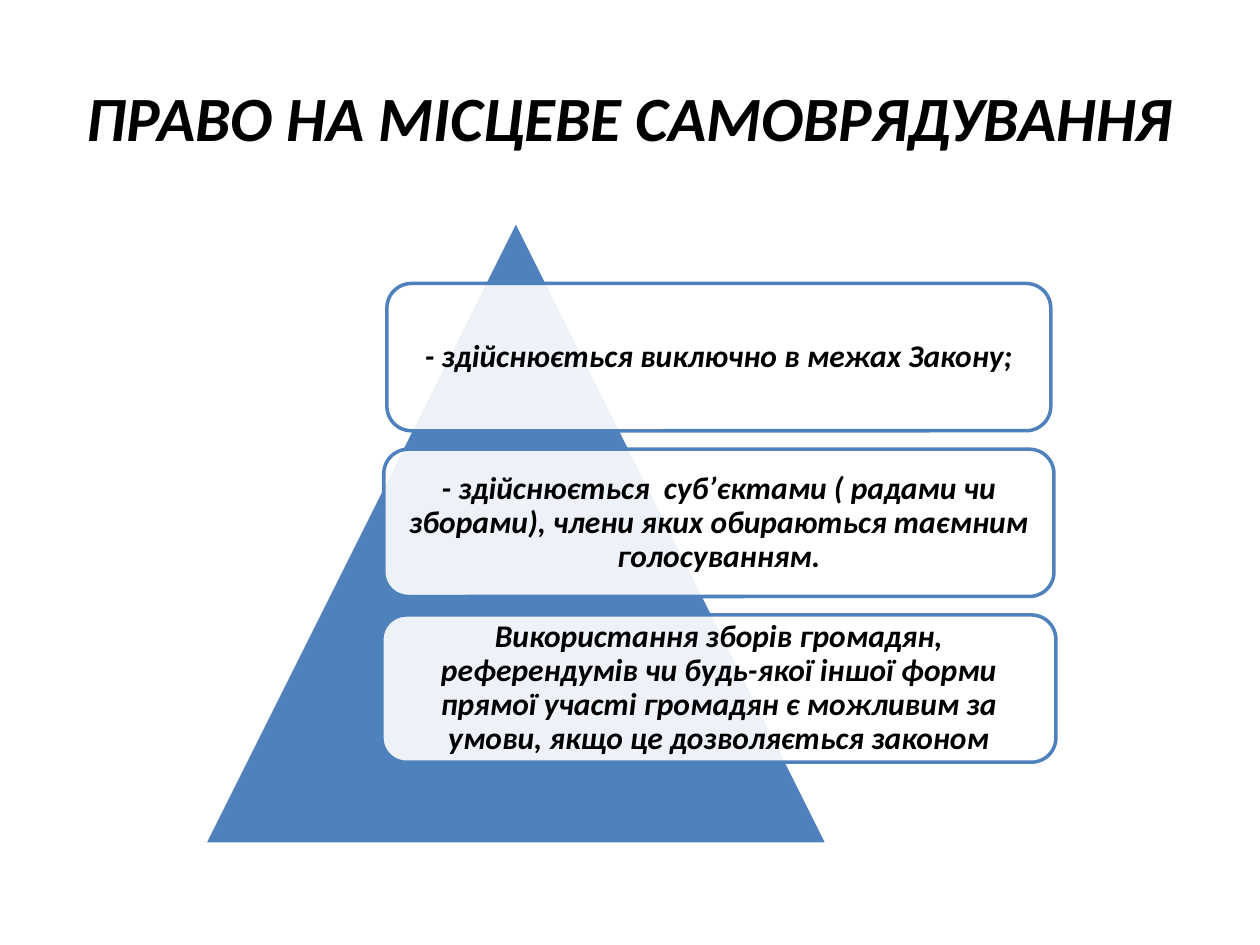
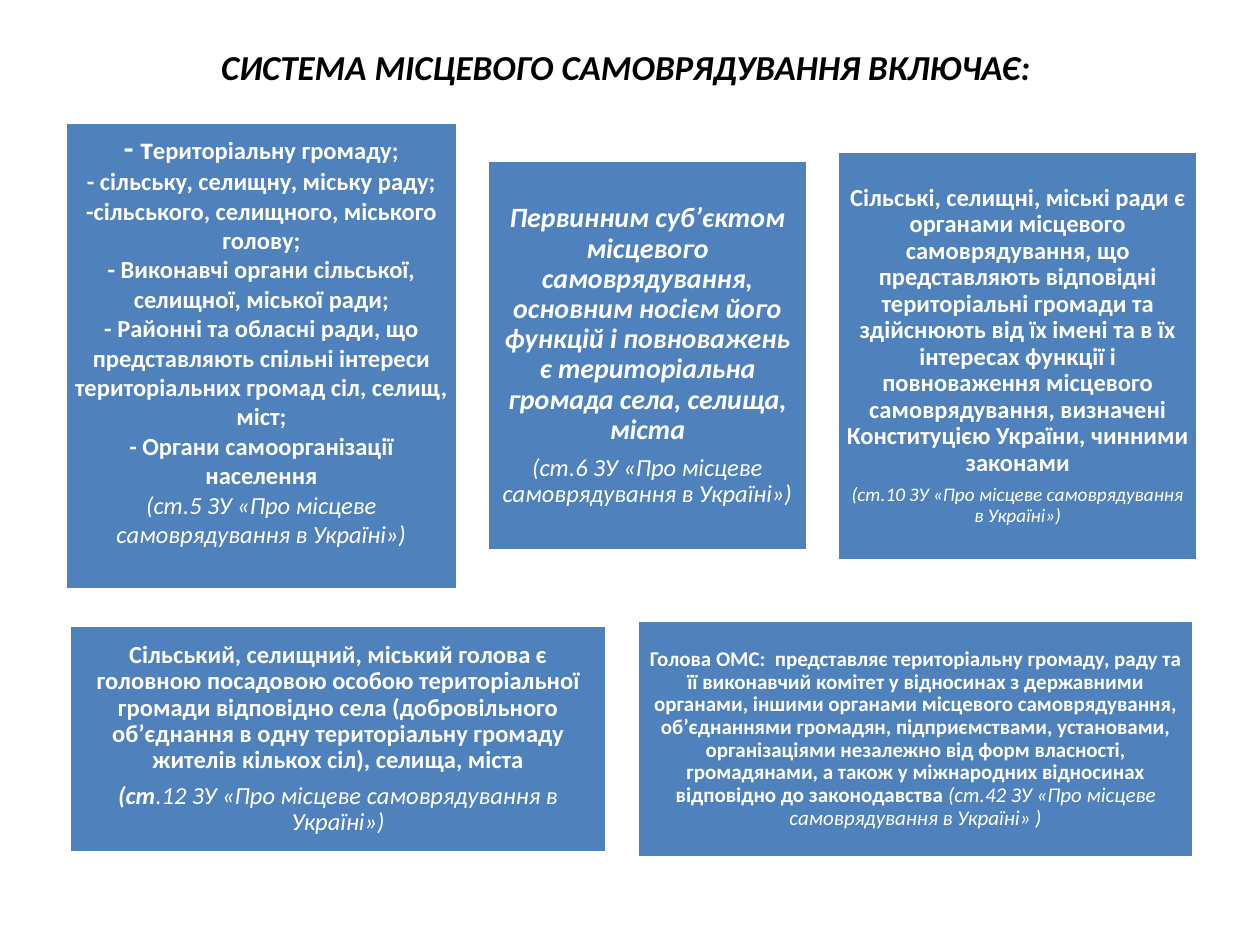
from dataclasses import dataclass
from typing import Optional

from lxml.etree import SubElement
from pptx import Presentation
from pptx.dml.color import RGBColor
from pptx.enum.shapes import MSO_SHAPE
from pptx.enum.text import MSO_ANCHOR, MSO_AUTO_SIZE, PP_ALIGN
from pptx.oxml.ns import qn
from pptx.util import Pt


@dataclass(frozen=True)
class Theme:
    font: str = "Calibri"
    blue: RGBColor = RGBColor(0x4F, 0x81, 0xBD)
    white: RGBColor = RGBColor(0xFF, 0xFF, 0xFF)
    black: RGBColor = RGBColor(0, 0, 0)
    line: float = 2
    head: int = 36
    subhead: int = 20
    large: int = 18
    medium: int = 16
    body: int = 14
    small: int = 12
    note: int = 11


THEME = Theme()


@dataclass(frozen=True)
class Style:
    size: int
    bold: bool = True
    italic: bool = False


@dataclass(frozen=True)
class Part:
    """A stretch of text whose style differs from the rest of its paragraph."""
    text: str
    style: Style


@dataclass(frozen=True)
class Para:
    text: str
    style: Style
    tail: Optional[Part] = None
    tight: bool = True


@dataclass(frozen=True)
class Area:
    left: float
    top: float
    width: float
    height: float


@dataclass(frozen=True)
class Card:
    width: float
    height: float
    inset: float
    paras: list[Para]
    foot: float = 0  # extra room under the text


STRONG = Style(THEME.body)
CITE = Style(THEME.body, False, True)
LEVEL = Style(THEME.large, True, True)

LEVELS = [
    (379.4, "- здійснюється виключно в межах Закону;"),
    (383, "- здійснюється  суб’єктами ( радами чи зборами), члени яких "
          "обираються таємним голосуванням."),
    (385.2, "Використання зборів громадян, референдумів чи будь-якої іншої "
            "форми прямої участі громадян є можливим за умови, якщо це "
            "дозволяється законом"),
]

PARTS = [
    "- сільську, селищну, міську раду;",
    "-сільського, селищного, міського голову;",
    "- Виконавчі органи сільської, селищної, міської ради;",
    "- Районні та обласні ради, що представляють спільні інтереси "
    "територіальних громад сіл, селищ, міст;",
    "- Органи самоорганізації населення",
]

UPPER = [
    Card(223.9, 267.1, 5, [
        Para("- т", Style(THEME.large), Part("ериторіальну громаду;", STRONG), False),
        *[Para(text, STRONG, tight=False) for text in PARTS],
        Para("(ст.5 ЗУ «Про місцеве самоврядування в Україні»)", CITE, tight=False),
    ], foot=20),
    Card(182.9, 223.2, 5, [
        Para("Первинним суб’єктом місцевого самоврядування, основним носієм "
             "його функцій і повноважень є територіальна громада села, "
             "селища, міста", Style(THEME.medium, True, True)),
        Para("(ст.6 ЗУ «Про місцеве самоврядування в Україні»)", CITE),
    ]),
    Card(205.9, 234, 4.2, [
        Para("Сільські, селищні, міські ради є органами місцевого "
             "самоврядування, що представляють відповідні територіальні "
             "громади та здійснюють від їх імені та в їх інтересах функції і "
             "повноваження місцевого самоврядування, визначені Конституцією "
             "України, чинними законами", STRONG),
        Para("(ст.10 ЗУ «Про місцеве самоврядування в Україні»)",
             Style(THEME.note, False, True)),
    ]),
]

LOWER = [
    Card(307.4, 130.3, 4.2, [
        Para("Сільський, селищний, міський голова є головною посадовою особою "
             "територіальної громади відповідно села (добровільного "
             "об’єднання в одну територіальну громаду жителів кількох сіл), "
             "селища, міста", STRONG),
        Para("(ст", Style(THEME.body, True, True),
             Part(".12 ЗУ «Про місцеве самоврядування в Україні»)", CITE)),
    ]),
    Card(318.2, 135.4, 3.6, [
        Para("Голова ОМС:  представляє територіальну громаду, раду та її "
             "виконавчий комітет у відносинах з державними органами, іншими "
             "органами місцевого самоврядування, об’єднаннями громадян, "
             "підприємствами, установами, організаціями незалежно від форм "
             "власності, громадянами, а також у міжнародних відносинах "
             "відповідно до законодавства ", Style(THEME.small),
             Part("(ст.42 ЗУ «Про місцеве самоврядування в Україні» )",
                  Style(THEME.small, False, True))),
    ]),
]


def set_font(font, style: Style, color: RGBColor) -> None:
    font.name = THEME.font
    font.size = Pt(style.size)
    font.bold = style.bold
    font.italic = style.italic
    font.color.rgb = color


def write(shape, paras: list[Para], color: RGBColor) -> None:
    frame = shape.text_frame
    frame.word_wrap = True
    frame.auto_size = MSO_AUTO_SIZE.NONE
    frame.vertical_anchor = MSO_ANCHOR.MIDDLE
    for i, para in enumerate(paras):
        line = frame.paragraphs[0] if i == 0 else frame.add_paragraph()
        line.alignment = PP_ALIGN.CENTER
        set_font(line.font, para.style, color)
        if para.tight:
            line.line_spacing = 0.9
            line.space_after = Pt(0.35 * para.style.size)
        parts = [Part(para.text, para.style)]
        if para.tail:
            parts.append(para.tail)
        for part in parts:
            run = line.add_run()
            run.text = part.text
            if para.tail:
                set_font(run.font, part.style, color)


def place(shape, area: Area) -> None:
    shape.left, shape.top = Pt(area.left), Pt(area.top)
    shape.width, shape.height = Pt(area.width), Pt(area.height)


def add_page(deck, text: str, size: int, area: Area):
    """Add a slide with its title and return it."""
    page = deck.slides.add_slide(deck.slide_layouts[5])
    title = page.shapes.title
    place(title, area)
    write(title, [Para(text, Style(size, True, True), tight=False)], THEME.black)
    return page


def add_block(page, kind: MSO_SHAPE, area: Area, fill: RGBColor, edge: RGBColor):
    shape = page.shapes.add_shape(kind, Pt(area.left), Pt(area.top),
                                  Pt(area.width), Pt(area.height))
    shape.shadow.inherit = False
    shape.fill.solid()
    shape.fill.fore_color.rgb = fill
    shape.line.color.rgb = edge
    shape.line.width = Pt(THEME.line)
    return shape


def set_inset(shape, inset: float, foot: float = 0) -> None:
    frame = shape.text_frame
    frame.margin_left = frame.margin_right = frame.margin_top = Pt(inset)
    frame.margin_bottom = Pt(inset + foot)


def fade(shape, share: int) -> None:
    """Make the fill opaque to the given percentage."""
    color = shape.fill._xPr.find(qn("a:solidFill"))[0]
    SubElement(color, qn("a:alpha")).set("val", str(share * 1000))


def add_levels(page) -> None:
    mid, top, height, pitch = 410.8, 162, 84.2, 94.7
    for i, (width, text) in enumerate(LEVELS):
        area = Area(mid - width / 2, top + i * pitch, width, height)
        box = add_block(page, MSO_SHAPE.ROUNDED_RECTANGLE, area,
                        THEME.white, THEME.blue)
        fade(box, 90)
        set_inset(box, 5)
        write(box, [Para(text, LEVEL)], THEME.black)


def add_row(page, cards: list[Card], axis: float) -> None:
    """Set cards side by side, centred on the page and on a horizontal axis."""
    mid, gap = 361, 17.2
    left = mid - (sum(card.width for card in cards) + gap * (len(cards) - 1)) / 2
    for card in cards:
        area = Area(left, axis - card.height / 2, card.width, card.height)
        box = add_block(page, MSO_SHAPE.RECTANGLE, area, THEME.blue, THEME.white)
        set_inset(box, card.inset, card.foot)
        write(box, card.paras, THEME.white)
        left += card.width + gap


def main() -> None:
    deck = Presentation()
    deck.slide_width, deck.slide_height = Pt(720), Pt(540)

    page = add_page(deck, "ПРАВО НА МІСЦЕВЕ САМОВРЯДУВАННЯ", THEME.head,
                    Area(36, 21.6, 648, 90))
    add_block(page, MSO_SHAPE.ISOSCELES_TRIANGLE, Area(116.6, 126, 356.4, 356.4),
              THEME.blue, THEME.white)
    add_levels(page)

    page = add_page(deck, "СИСТЕМА МІСЦЕВОГО САМОВРЯДУВАННЯ ВКЛЮЧАЄ: ",
                    THEME.subhead, Area(36, 15.1, 648, 45.4))
    add_row(page, UPPER, 203.4)
    add_row(page, LOWER, 422.2)
    deck.save("out.pptx")


if __name__ == "__main__":
    main()
